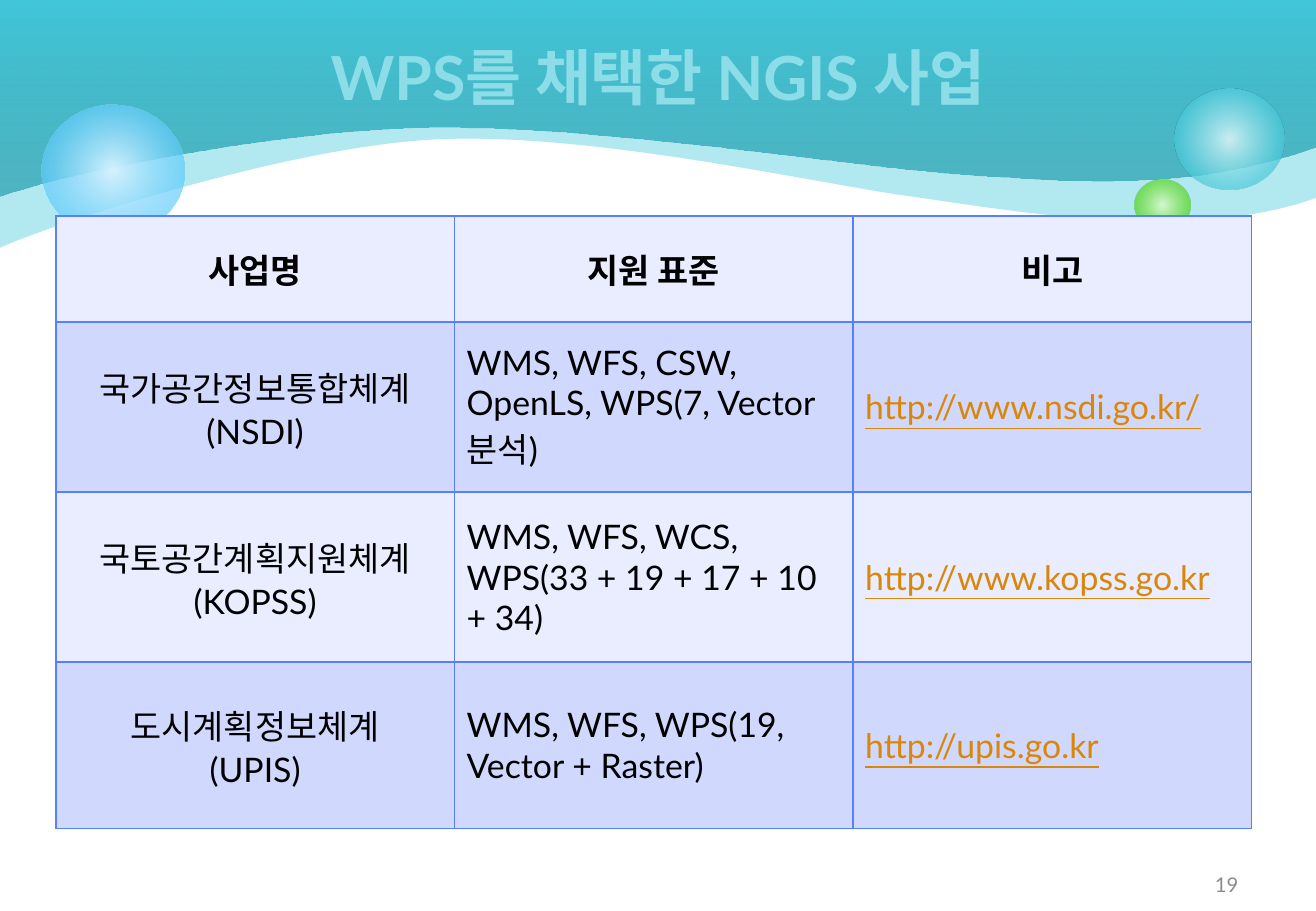
from dataclasses import dataclass

from pptx import Presentation
from pptx.dml.color import RGBColor
from pptx.enum import shapes, text
from pptx.oxml import parse_xml
from pptx.oxml.ns import nsdecls, qn
from pptx.util import Inches, Pt


@dataclass(frozen=True)
class Theme:
    font: str = "Lato"
    title_size: int = 36
    body_size: int = 20
    number_size: int = 12
    title: str = "8CDDE8"
    ink: str = "000000"
    link: str = "D98609"
    number: str = "8C8C8C"
    aqua: str = "40C6D8"
    teal: str = "249EAE"
    border: str = "5581FD"
    bands: tuple = ("E9EDFF", "D1D8FE")


THEME = Theme()
WIDTH, HEIGHT = 10.83, 7.5
UNITS = 1000  # freeform units to the inch

# Lower edge of each wave: start point, then cubic curves (two handles, end).
BACK_WAVE = ((0, 2.04), [
    ((0.36, 1.87), (2.31, 1.22), (3.55, 1.15)),
    ((4.79, 1.08), (6.57, 1.48), (7.44, 1.61)),
    ((8.32, 1.73), (9.77, 2.01), (10.83, 1.63))])
FRONT_WAVE = ((0, 1.62), [
    ((0.49, 1.44), (2.2, 1.08), (3.53, 1.05)),
    ((4.86, 1.02), (7.13, 1.39), (7.98, 1.44)),
    ((8.84, 1.49), (9.77, 1.59), (10.83, 1.21))])

# Box, then gradient stops (position, colour, opacity) from centre to rim.
BUBBLES = [
    ((9.67, 0.73, 0.9, 0.83), [(0, "D9F4F7", 90), (76, THEME.aqua, 70)]),
    ((9.34, 1.48, 0.46, 0.42), [(0, "DAFACD", 90), (76, "4CD416", 70)]),
    ((0.34, 0.86, 1.18, 1.09), [(0, "D6F2FE", 100), (100, "33BDFB", 54)])]

HEADINGS = ["사업명", "지원 표준", "비고"]
PROJECTS = [
    ("국가공간정보통합체계\n(NSDI)",
     "WMS, WFS, CSW, OpenLS, WPS(7, Vector분석)", "http://www.nsdi.go.kr/"),
    ("국토공간계획지원체계\n(KOPSS)",
     "WMS, WFS, WCS, WPS(33 + 19 + 17 + 10 + 34)", "http://www.kopss.go.kr"),
    ("도시계획정보체계\n(UPIS)",
     "WMS, WFS, WPS(19, Vector + Raster)", "http://upis.go.kr")]
ROW_HEIGHTS = [0.87, 1.4, 1.4, 1.37]


def write(frame, words, size=THEME.body_size, color=THEME.ink, bold=False,
          underline=False, align=text.PP_ALIGN.LEFT):
    frame.word_wrap = True
    for index, line in enumerate(words.split("\n")):
        para = frame.paragraphs[0] if index == 0 else frame.add_paragraph()
        para.alignment = align
        span = para.add_run()
        span.text = line
        font = span.font
        font.name, font.size = THEME.font, Pt(size)
        font.bold, font.underline = bold, underline
        font.color.rgb = RGBColor.from_string(color)
        span._r.get_or_add_rPr().set("kern", "0")


def paint(shape, stops, direction):
    """Fill a borderless shape with translucent stops; direction is XML."""
    shape.shadow.inherit = False
    shape.line.fill.background()
    marks = "".join(
        f'<a:gs pos="{position * 1000}"><a:srgbClr val="{color}">'
        f'<a:alpha val="{opacity * 1000}"/></a:srgbClr></a:gs>'
        for position, color, opacity in stops)
    shape.fill.background()
    blank = shape.element.spPr.find(qn("a:noFill"))
    blank.getparent().replace(blank, parse_xml(
        f'<a:gradFill {nsdecls("a")} rotWithShape="1"><a:gsLst>{marks}</a:gsLst>'
        f'{direction}</a:gradFill>'))


def add_wave(page, wave, stops):
    """Draw the wave's corners, then bend its lower edge into curves."""
    start, curves = wave
    corners = [start, *(curve[-1] for curve in curves), (WIDTH, 0)]
    builder = page.shapes.build_freeform(0, 0, scale=Inches(1) / UNITS)
    builder.add_line_segments(
        [(round(x * UNITS), round(y * UNITS)) for x, y in corners], close=True)
    shape = builder.convert_to_shape()
    edges = list(shape.element.iter(qn("a:lnTo")))[1:]
    for edge, curve in zip(edges, curves):
        points = "".join(f'<a:pt x="{round(x * UNITS)}" y="{round(y * UNITS)}"/>'
                         for x, y in curve)
        edge.getparent().replace(edge, parse_xml(
            f'<a:cubicBezTo {nsdecls("a")}>{points}</a:cubicBezTo>'))
    paint(shape, stops, '<a:lin ang="16200000" scaled="0"/>')


def add_backdrop(page):
    add_wave(page, BACK_WAVE, [(0, THEME.aqua, 40), (100, THEME.aqua, 40)])
    add_wave(page, FRONT_WAVE, [(0, THEME.teal, 69), (100, THEME.aqua, 100)])
    for box, stops in BUBBLES:
        bubble = page.shapes.add_shape(shapes.MSO_SHAPE.OVAL, *map(Inches, box))
        paint(bubble, stops, '<a:path path="circle"><a:fillToRect l="50000" '
                             't="50000" r="50000" b="50000"/></a:path>')


def place_title(page, box, words):
    """Format the title placeholder and bring it in front of the backdrop."""
    title = page.shapes.title
    title.left, title.top, title.width, title.height = map(Inches, box)
    title.text_frame.vertical_anchor = text.MSO_ANCHOR.MIDDLE
    write(title.text_frame, words, size=THEME.title_size, color=THEME.title,
          bold=True, align=text.PP_ALIGN.CENTER)
    title.element.getparent().append(title.element)


def add_page_number(page, box, number):
    label = page.shapes.add_textbox(*map(Inches, box))
    label.text_frame.vertical_anchor = text.MSO_ANCHOR.MIDDLE
    write(label.text_frame, number, size=THEME.number_size,
          color=THEME.number, align=text.PP_ALIGN.RIGHT)


def format_cell(cell, band):
    cell.vertical_anchor = text.MSO_ANCHOR.MIDDLE
    properties = cell._tc.get_or_add_tcPr()
    for side in "LRTB":
        properties.append(parse_xml(
            f'<a:ln{side} {nsdecls("a")} w="{Pt(1)}"><a:solidFill>'
            f'<a:srgbClr val="{THEME.border}"/></a:solidFill></a:ln{side}>'))
    cell.fill.solid()
    cell.fill.fore_color.rgb = RGBColor.from_string(band)


def add_project_table(page, box):
    rows = [HEADINGS, *PROJECTS]
    table = page.shapes.add_table(
        len(rows), len(HEADINGS), *map(Inches, box)).table
    for column in table.columns:
        column.width = Inches(box[2] / len(HEADINGS))
    centre = {"align": text.PP_ALIGN.CENTER}
    styles = [centre, {}, {"color": THEME.link, "underline": True}]
    for r, entries in enumerate(rows):
        table.rows[r].height = Inches(ROW_HEIGHTS[r])
        for c, words in enumerate(entries):
            cell = table.cell(r, c)
            format_cell(cell, THEME.bands[r % 2])
            style = styles[c] if r else {"bold": True, **centre}
            write(cell.text_frame, words, **style)


def main():
    deck = Presentation()
    deck.slide_width, deck.slide_height = Inches(WIDTH), Inches(HEIGHT)
    page = deck.slides.add_slide(deck.slide_layouts[5])
    add_backdrop(page)
    add_page_number(page, (7.76, 7.15, 2.53, 0.27), "19")
    place_title(page, (0.54, 0, 9.75, 1.25), "WPS를 채택한 NGIS 사업")
    add_project_table(page, (0.46, 1.78, 9.84, sum(ROW_HEIGHTS)))
    deck.save("out.pptx")


if __name__ == "__main__":
    main()
